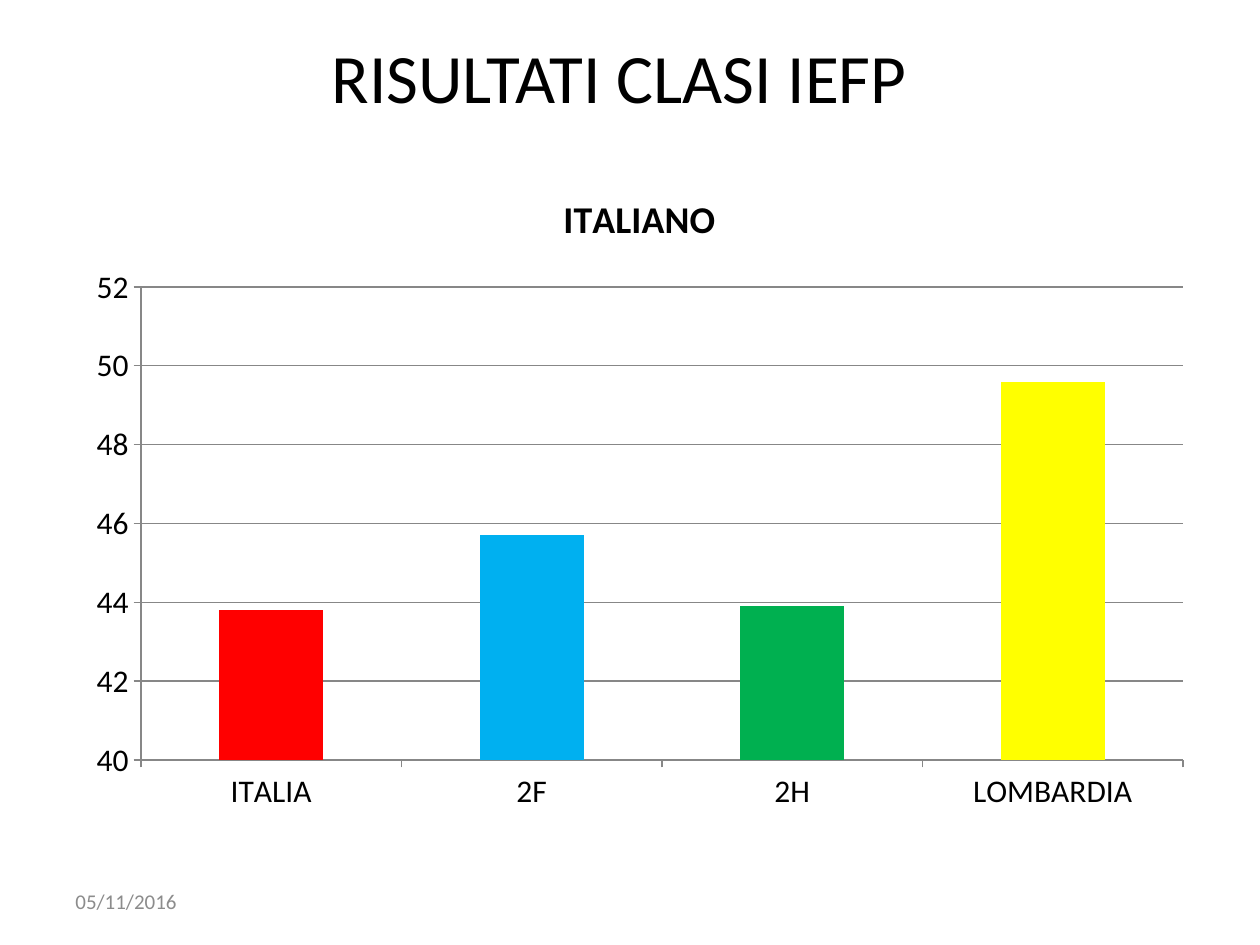
from dataclasses import dataclass

from lxml import etree
from pptx import Presentation
from pptx import util as u
from pptx.chart.data import CategoryChartData
from pptx.dml.color import RGBColor
from pptx.enum import chart as charts, text
from pptx.oxml.ns import qn

TITLE = "RISULTATI CLASI IEFP"
DATE = "05/11/2016"
CHART_TITLE = "ITALIANO"
RESULTS = [  # category, score, bar colour
    ("ITALIA", 43.8, "FF0000"),
    ("2F", 45.7, "00B0F0"),
    ("2H", 43.9, "00B050"),
    ("LOMBARDIA", 49.6, "FFFF00"),
]
AXIS_MIN, AXIS_MAX, AXIS_STEP = 40, 52, 2

# left, top, width, height in px
SLIDE_SIZE = (1260, 945)
TITLE_BOX = (84, 26, 1071, 100)
CHART_BOX = (74, 165, 1131, 659)
PLOT_BOX = (141, 287, 1042, 473)
DATE_BOX = (63, 876, 294, 50)
EMU_PER_PX = 914400 / 126


@dataclass(frozen=True)
class Theme:
    font: str = "Calibri"
    ink: str = "000000"
    muted: str = "8C8C8C"
    grid: str = "878787"
    title_size: float = 39.6
    chart_title_size: float = 21.6
    axis_size: float = 18
    date_size: float = 12


THEME = Theme()


def px(*lengths):
    return [u.Emu(round(length * EMU_PER_PX)) for length in lengths]


def set_font(font, size, color=THEME.ink, bold=False):
    font.name, font.size, font.bold = THEME.font, u.Pt(size), bold
    font.color.rgb = RGBColor.from_string(color)


def write(frame, content, align=text.PP_ALIGN.LEFT, **font_format):
    frame.text = content
    frame.word_wrap = True
    frame.auto_size = text.MSO_AUTO_SIZE.NONE
    frame.vertical_anchor = text.MSO_ANCHOR.MIDDLE
    paragraph = frame.paragraphs[0]
    paragraph.alignment = align
    set_font(paragraph.runs[0].font, **font_format)


def style_line(line):
    line.color.rgb = RGBColor.from_string(THEME.grid)
    line.width = u.Pt(0.75)


def place_plot(chart):
    """Fix the inner plot area as fractions of the chart frame."""
    left, top, width, height = CHART_BOX
    plot_left, plot_top, plot_width, plot_height = PLOT_BOX
    fractions = {
        "x": (plot_left - left) / width,
        "y": (plot_top - top) / height,
        "w": plot_width / width,
        "h": plot_height / height,
    }
    plot_area = chart.element.find(".//" + qn("c:plotArea"))
    for old_layout in plot_area.findall(qn("c:layout")):
        plot_area.remove(old_layout)
    layout = etree.Element(qn("c:layout"))
    manual = etree.SubElement(layout, qn("c:manualLayout"))
    settings = [("layoutTarget", "inner"), ("xMode", "edge"), ("yMode", "edge")]
    settings += [(key, f"{value:.4f}") for key, value in fractions.items()]
    for name, value in settings:
        etree.SubElement(manual, qn("c:" + name)).set("val", value)
    plot_area.insert(0, layout)


def add_results_chart(slide):
    categories, scores, colors = zip(*RESULTS)
    data = CategoryChartData(number_format="General")
    data.categories = categories
    data.add_series(CHART_TITLE, scores)
    chart = slide.shapes.add_chart(
        charts.XL_CHART_TYPE.COLUMN_CLUSTERED, *px(*CHART_BOX), data).chart
    set_font(chart.font, THEME.axis_size)
    chart.has_legend = False
    chart.has_title = True
    title_frame = chart.chart_title.text_frame
    title_frame.text = CHART_TITLE
    set_font(title_frame.paragraphs[0].runs[0].font,
             THEME.chart_title_size, bold=True)

    plot = chart.plots[0]
    plot.gap_width = 150
    plot.vary_by_categories = False
    for index, color in enumerate(colors):
        fill = plot.series[0].points[index].format.fill
        fill.solid()
        fill.fore_color.rgb = RGBColor.from_string(color)

    for axis in (chart.category_axis, chart.value_axis):
        axis.major_tick_mark = charts.XL_TICK_MARK.OUTSIDE
        axis.minor_tick_mark = charts.XL_TICK_MARK.NONE
        style_line(axis.format.line)
    scale = chart.value_axis
    scale.minimum_scale, scale.maximum_scale = AXIS_MIN, AXIS_MAX
    scale.major_unit = AXIS_STEP
    scale.has_major_gridlines = True
    style_line(scale.major_gridlines.format.line)
    place_plot(chart)


def main():
    presentation = Presentation()
    presentation.slide_width, presentation.slide_height = px(*SLIDE_SIZE)
    slide = presentation.slides.add_slide(presentation.slide_layouts[5])
    title = slide.shapes.title
    title.left, title.top, title.width, title.height = px(*TITLE_BOX)
    write(title.text_frame, TITLE, align=text.PP_ALIGN.CENTER,
          size=THEME.title_size)
    add_results_chart(slide)
    date_box = slide.shapes.add_textbox(*px(*DATE_BOX))
    write(date_box.text_frame, DATE, size=THEME.date_size, color=THEME.muted)
    presentation.save("out.pptx")


if __name__ == "__main__":
    main()
